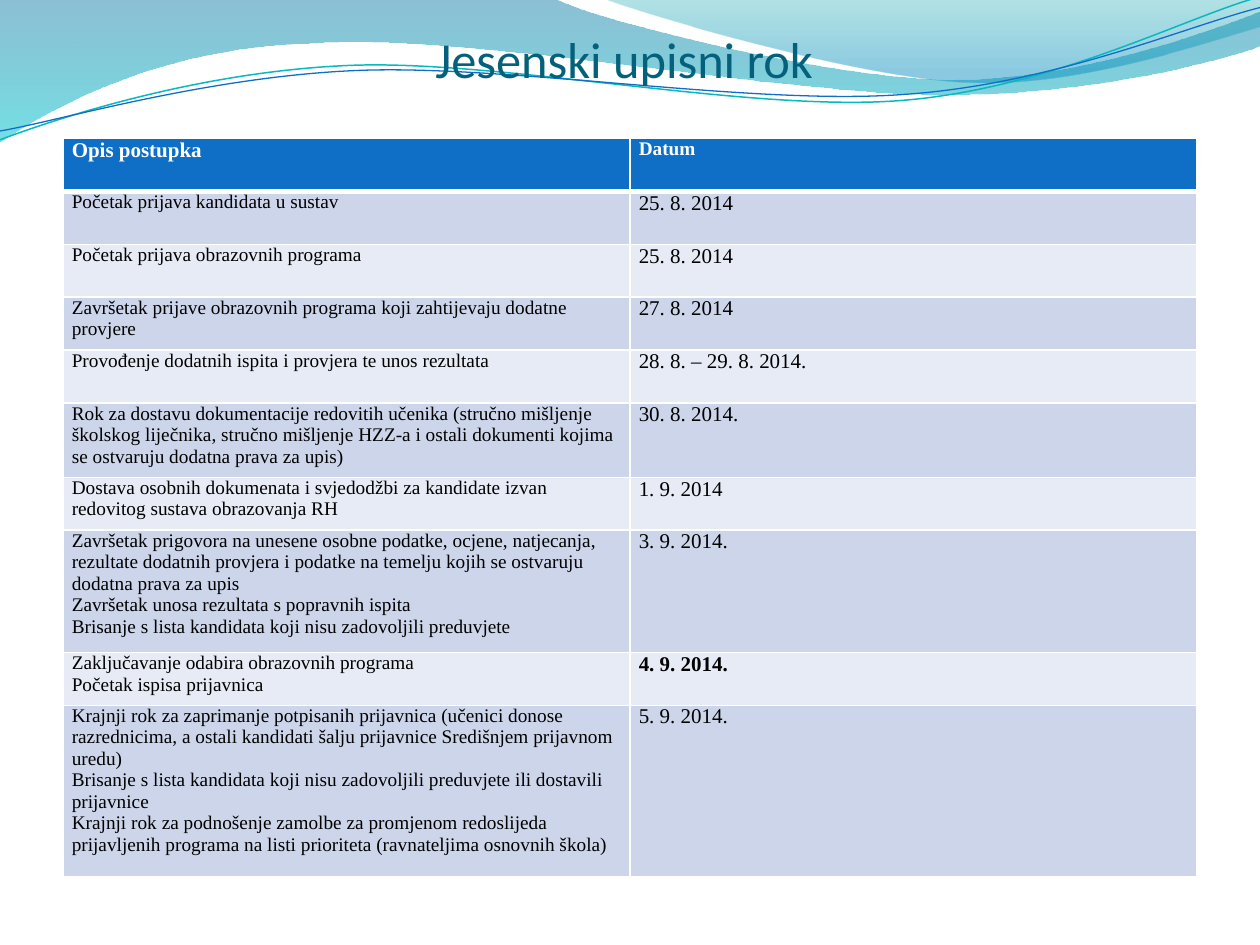
from lxml import etree
from pptx import Presentation
from pptx.dml.color import RGBColor
from pptx.enum import text
from pptx.oxml.ns import qn
from pptx.util import Inches, Pt

SERIF = "Times New Roman"
WHITE = "FFFFFF"
BLUE = "0F6FC6"

# Each outline: a start point, then cubic (6 numbers) or straight (2) segments
BACK_WAVE = [(0, 0), (4.4, -0.01), (4.76, 0.17, 6.64, 0.63, 7.58, 0.63),
             (8.53, 0.63, 9.58, 0.26, 10, 0.09), (10.01, 0.36),
             (9.83, 0.44, 8.7, 0.76, 7.46, 0.75),
             (6.22, 0.75, 3.82, 0.28, 2.57, 0.34),
             (1.29, 0.36, 0.46, 0.83, -0.01, 1.13), (0, 0)]
FRONT_WAVE = [(4.79, -0.01), (5.09, 0.11, 6.82, 0.62, 7.69, 0.65),
              (8.56, 0.69, 9.61, 0.32, 10, 0.21), (10, 0), (4.79, -0.01)]
TEAL_LINE = [(0, 1.11), (0.48, 0.93, 1.58, 0.57, 2.77, 0.52),
             (3.95, 0.47, 5.93, 0.89, 7.13, 0.8),
             (8.33, 0.71, 9.38, 0.15, 9.98, -0.02)]
BLUE_LINE = [(0, 1.04), (0.47, 0.96, 1.64, 0.61, 2.83, 0.56),
             (4.03, 0.51, 5.97, 0.84, 7.17, 0.75),
             (8.36, 0.67, 9.41, 0.21, 10, 0.06)]

# Row height, description paragraphs, date
ROWS = [
    (0.42, ["Opis postupka"], "Datum"),
    (0.42, ["Početak prijava kandidata u sustav"], "25. 8. 2014"),
    (0.42, ["Početak prijava obrazovnih programa"], "25. 8. 2014"),
    (0.42, ["Završetak prijave obrazovnih programa koji zahtijevaju dodatne "
            "provjere"], "27. 8. 2014"),
    (0.42, ["Provođenje dodatnih ispita i provjera te unos rezultata"],
     "28. 8. – 29. 8. 2014."),
    (0.59, ["Rok za dostavu dokumentacije redovitih učenika (stručno mišljenje "
            "školskog liječnika, stručno mišljenje HZZ-a i ostali dokumenti "
            "kojima se ostvaruju dodatna prava za upis)"], "30. 8. 2014."),
    (0.42, ["Dostava osobnih dokumenata i svjedodžbi za kandidate izvan "
            "redovitog sustava obrazovanja RH"], "1. 9. 2014"),
    (0.97, ["Završetak prigovora na unesene osobne podatke, ocjene, natjecanja, "
            "rezultate dodatnih provjera i podatke na temelju kojih se "
            "ostvaruju dodatna prava za upis",
            "Završetak unosa rezultata s popravnih ispita",
            "Brisanje s lista kandidata koji nisu zadovoljili preduvjete"],
     "3. 9. 2014."),
    (0.42, ["Zaključavanje odabira obrazovnih programa",
            "Početak ispisa prijavnica"], "4. 9. 2014."),
    (1.36, ["Krajnji rok za zaprimanje potpisanih prijavnica (učenici donose "
            "razrednicima, a ostali kandidati šalju prijavnice Središnjem "
            "prijavnom uredu)",
            "Brisanje s lista kandidata koji nisu zadovoljili preduvjete ili "
            "dostavili prijavnice",
            "Krajnji rok za podnošenje zamolbe za promjenom redoslijeda "
            "prijavljenih programa na listi prioriteta (ravnateljima osnovnih "
            "škola)"], "5. 9. 2014."),
]
KEY_ROW = 8  # the row whose date is bold


def rgb(value):
    return RGBColor.from_string(value)


def sub(parent, tag, **attrs):
    return etree.SubElement(parent, qn(tag), attrs)


def add_outline(s, left, top, segments, close):
    """Build through all points, then join each three of a cubic segment."""
    points = [(left + Inches(seg[i]), top + Inches(seg[i + 1]))
              for seg in segments for i in range(0, len(seg), 2)]
    builder = s.shapes.build_freeform(*points[0])
    builder.add_line_segments(points[1:], close=close)
    sp = builder.convert_to_shape()
    sp.shadow.inherit = False
    steps = iter(list(sp._element.spPr.iter(qn("a:lnTo"))))
    for seg in segments[1:]:
        first = next(steps)
        if len(seg) == 6:
            first.tag = qn("a:cubicBezTo")
            for _ in range(2):
                step = next(steps)
                first.append(step[0])
                step.getparent().remove(step)
    return sp


def add_wave(s, left, top, segments, stops):
    sp = add_outline(s, left, top, segments, True)
    sp.line.fill.background()
    sp.fill.gradient()
    grad = sp._element.spPr.find(qn("a:gradFill"))
    for child in list(grad):
        grad.remove(child)
    stop_list = sub(grad, "a:gsLst")
    for pos, color, opacity in stops:
        stop = sub(stop_list, "a:gs", pos=str(pos * 1000))
        clr = sub(stop, "a:srgbClr", val=color)
        sub(clr, "a:alpha", val=str(opacity * 1000))
    sub(grad, "a:lin", ang="5400000", scaled="0")


def add_header(s, left, top):
    """Translucent waves with two thin lines over them."""
    add_wave(s, left, top, BACK_WAVE, [(0, "0074A1", 45), (100, "00C6CF", 55)])
    add_wave(s, left, top, FRONT_WAVE, [(0, "00A1A9", 30), (80, "008BBF", 45)])
    for segments, color, width in ((TEAL_LINE, "0AB8BF", 0.85),
                                   (BLUE_LINE, BLUE, 0.75)):
        sp = add_outline(s, left, top, segments, False)
        sp.fill.background()
        sp.line.color.rgb = rgb(color)
        sp.line.width = Pt(width)


def add_title(s, left, top, width, height):
    tf = s.shapes.add_textbox(left, top, width, height).text_frame
    tf.word_wrap = True
    tf.vertical_anchor = text.MSO_ANCHOR.BOTTOM
    tf.margin_left = tf.margin_right = tf.margin_bottom = 0
    tf.margin_top = Inches(0.05)
    p = tf.paragraphs[0]
    p.text = "Jesenski upisni rok "
    p.alignment = text.PP_ALIGN.CENTER
    p.font.name, p.font.size = "Calibri", Pt(28.8)
    p.font.color.rgb = rgb("04617B")


def set_borders(cell, top, bottom):
    tc_pr = cell._tc.get_or_add_tcPr()
    for side, width in (("L", 1), ("R", 1), ("T", top), ("B", bottom)):
        ln = sub(tc_pr, f"a:ln{side}", w=str(Pt(width)))
        sub(sub(ln, "a:solidFill"), "a:srgbClr", val=WHITE)


def fill_cell(cell, lines, size, bold, color):
    cell.margin_left = cell.margin_right = Inches(0.07)
    cell.margin_top = cell.margin_bottom = 0
    cell.text = "\n".join(lines)
    for p in cell.text_frame.paragraphs:
        p.font.name, p.font.size, p.font.bold = SERIF, Pt(size), bold
        p.font.color.rgb = rgb(color)


def add_schedule(s, left, top, width):
    height = Inches(sum(row[0] for row in ROWS))
    table = s.shapes.add_table(len(ROWS), 2, left, top, width, height).table
    for i, (row_height, steps, date) in enumerate(ROWS):
        table.rows[i].height = Inches(row_height)
        head = i == 0
        ground = BLUE if head else ("E7EBF5", "CCD5EA")[i % 2]
        color = WHITE if head else "000000"
        sizes = (12, 11) if head else (11, 12)
        bolds = (head, head or i == KEY_ROW)
        for j, lines in enumerate((steps, [date])):
            cell = table.cell(i, j)
            set_borders(cell, 3 if i == 1 else 1, 3 if head else 1)
            cell.fill.solid()
            cell.fill.fore_color.rgb = rgb(ground)
            fill_cell(cell, lines, sizes[j], bolds[j], color)


def main():
    prs = Presentation()
    prs.slide_width, prs.slide_height = Inches(10), Inches(7.5)
    s = prs.slides.add_slide(prs.slide_layouts[6])
    add_header(s, 0, 0)
    add_title(s, Inches(0.5), Inches(0.23), Inches(9), Inches(0.47))
    add_schedule(s, Inches(0.5), Inches(1.1), Inches(9))
    prs.save("out.pptx")


if __name__ == "__main__":
    main()
